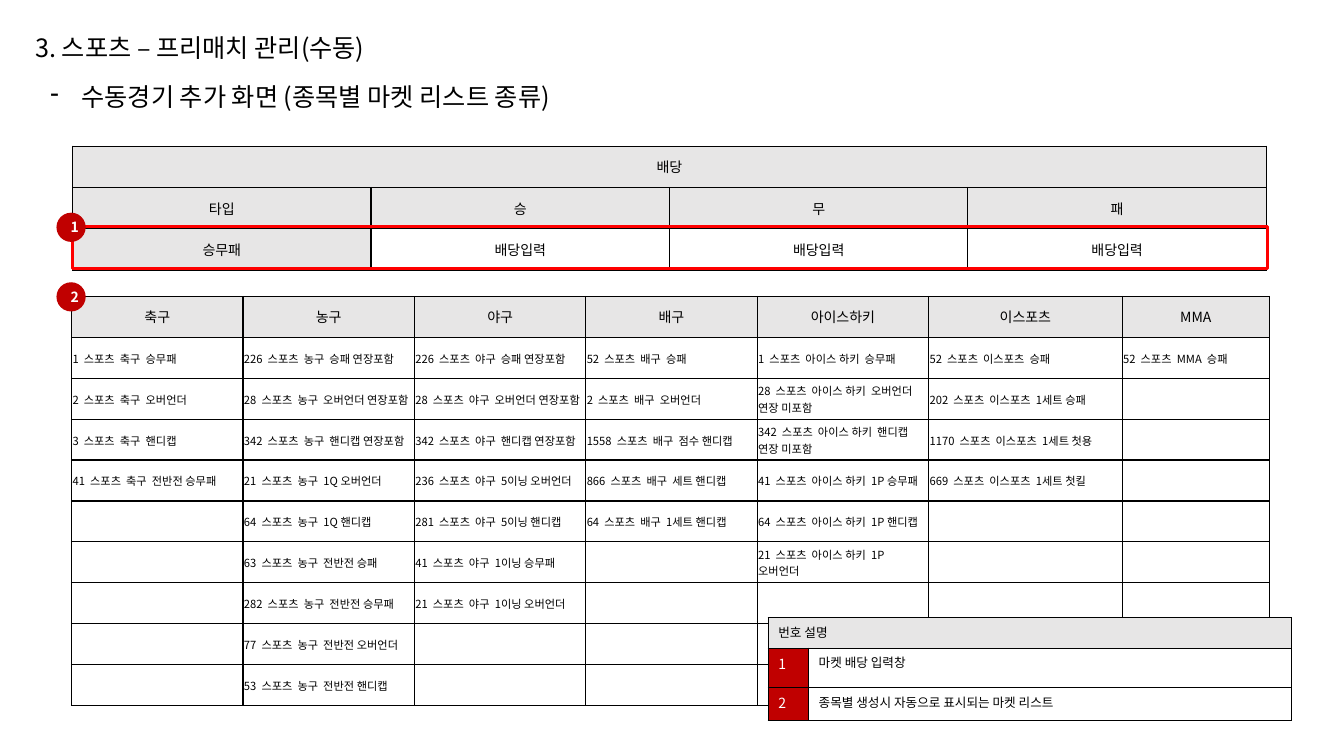
from lxml import etree
from pptx import Presentation
from pptx.dml.color import RGBColor as RGB
from pptx.enum.shapes import MSO_SHAPE as Shape
from pptx.enum.text import MSO_ANCHOR as Anchor, MSO_AUTO_SIZE as Auto, PP_ALIGN as Align
from pptx.oxml.ns import qn
from pptx.util import Inches, Pt

FONT = "Noto Sans CJK KR"
COLORS = {
    "black": "000000", "white": "FFFFFF", "gray": "E7E6E6",
    "dark": "C00000", "red": "FF0000",
}
HUES = {name: RGB.from_string(code) for name, code in COLORS.items()}


def style(para, size, color="black", bold=False, align=Align.LEFT):
    para.alignment = align
    font = para.font
    font.size, font.bold, font.name = Pt(size), bold, FONT
    font.color.rgb = HUES[color]
    props = para._p.get_or_add_pPr().get_or_add_defRPr()
    etree.SubElement(props, qn("a:ea"), typeface=FONT)


def grid(left, top, widths, heights, rows):
    """Add a table with thin black borders; rows hold text."""
    table = slide.shapes.add_table(
        len(heights), len(widths), Inches(left), Inches(top),
        Inches(sum(widths)), Inches(sum(heights))).table
    table.first_row = table.horz_banding = False
    for col, width in zip(table.columns, widths):
        col.width = Inches(width)
    for row, height, texts in zip(table.rows, heights, rows):
        row.height = Inches(height)
        for cell, text in zip(row.cells, texts):
            cell.text = text
            props = cell._tc.get_or_add_tcPr()
            for side in ("lnL", "lnR", "lnT", "lnB"):
                line = etree.SubElement(props, qn(f"a:{side}"), w=str(Pt(1)))
                fill = etree.SubElement(line, qn("a:solidFill"))
                etree.SubElement(fill, qn("a:srgbClr"), val=COLORS["black"])
            cell.fill.solid()
            cell.fill.fore_color.rgb = HUES["white"]
    return table


deck = Presentation()
deck.slide_width, deck.slide_height = Inches(13.33), Inches(7.5)
slide = deck.slides.add_slide(deck.slide_layouts[5])

# Headings
title = slide.shapes.title
title.left, title.top = Inches(0.25), Inches(0.27)
title.width, title.height = Inches(3.82), Inches(0.4)
sub = slide.shapes.add_textbox(Inches(0.4), Inches(0.76), Inches(5.75), Inches(0.4))
for box, text in (
    (title, "3. 스포츠 – 프리매치 관리(수동)"),
    (sub, "수동경기 추가 화면 (종목별 마켓 리스트 종류)"),
):
    frame = box.text_frame
    frame.text = text
    frame.word_wrap = False
    frame.auto_size = Auto.SHAPE_TO_FIT_TEXT
    frame.vertical_anchor = Anchor.TOP
    style(frame.paragraphs[0], 18)

# Dash bullet of the second heading
props = sub.text_frame.paragraphs[0]._p.get_or_add_pPr()
props.set("marL", str(Inches(0.31)))
props.set("indent", str(-Inches(0.31)))
dash = etree.Element(qn("a:buChar"), char="-")
props.insert(0, dash)

# Odds table
odds = grid(0.72, 1.45, [2.96] * 4, [0.41] * 3, [
    ["배당", "", "", ""],
    ["타입", "승", "무", "패"],
    ["승무패"] + ["배당입력"] * 3,
])
odds.cell(0, 0).merge(odds.cell(0, 3))
for r in range(3):
    for c in range(4):
        cell = odds.cell(r, c)
        cell.vertical_anchor = Anchor.MIDDLE
        style(cell.text_frame.paragraphs[0], 10, align=Align.CENTER)
        if r < 2 or c == 0:
            cell.fill.fore_color.rgb = HUES["gray"]

# Market table: header, name used in the rows, then number and market
sports = [
    ("축구", "축구", [("1", "승무패"), ("2", "오버언더"), ("3", "핸디캡"),
                  ("41", "전반전 승무패")]),
    ("농구", "농구", [("226", "승패 연장포함"), ("28", "오버언더 연장포함"),
                  ("342", "핸디캡 연장포함"), ("21", "1Q 오버언더"),
                  ("64", "1Q 핸디캡"), ("63", "전반전 승패"),
                  ("282", "전반전 승무패"), ("77", "전반전 오버언더"),
                  ("53", "전반전 핸디캡")]),
    ("야구", "야구", [("226", "승패 연장포함"), ("28", "오버언더 연장포함"),
                  ("342", "핸디캡 연장포함"), ("236", "5이닝 오버언더"),
                  ("281", "5이닝 핸디캡"), ("41", "1이닝 승무패"),
                  ("21", "1이닝 오버언더")]),
    ("배구", "배구", [("52", "승패"), ("2", "오버언더"), ("1558", "점수 핸디캡"),
                  ("866", "세트 핸디캡"), ("64", "1세트 핸디캡")]),
    ("아이스하키", "아이스 하키", [("1", "승무패"), ("28", "오버언더 연장 미포함"),
                         ("342", "핸디캡 연장 미포함"), ("41", "1P 승무패"),
                         ("64", "1P 핸디캡"), ("21", "1P 오버언더")]),
    ("이스포츠", "이스포츠", [("52", "승패"), ("202", "1세트 승패"),
                      ("1170", "1세트 첫용"), ("669", "1세트 첫킬")]),
    ("MMA", "MMA", [("52", "승패")]),
]
rows = [[head for head, _, _ in sports]]
for i in range(9):
    rows.append(["  ".join((items[i][0], "스포츠", name, items[i][1]))
                 if i < len(items) else "" for _, name, items in sports])
markets = grid(0.71, 2.94, [1.7] * 5 + [1.92, 1.46], [4.06 / 10] * 10, rows)
for r, row in enumerate(markets.rows):
    for cell in row.cells:
        cell.vertical_anchor = Anchor.MIDDLE
        para = cell.text_frame.paragraphs[0]
        if r == 0:
            style(para, 10, align=Align.CENTER)
            cell.fill.fore_color.rgb = HUES["gray"]
        else:
            style(para, 8)
            cell.margin_left = cell.margin_right = cell.margin_top = Inches(0.01)
            cell.margin_bottom = 0

# Legend table
legend = grid(7.62, 6.13, [0.4, 4.79], [0.3, 0.39, 0.33], [
    ["번호 설명", ""],
    ["1", "마켓 배당 입력창"],
    ["2", "종목별 생성시 자동으로 표시되는 마켓 리스트"],
])
legend.cell(0, 0).merge(legend.cell(0, 1))
for r, row in enumerate(legend.rows):
    for c, cell in enumerate(row.cells):
        key = r > 0 and c == 0
        style(cell.text_frame.paragraphs[0], 10 if key else 9,
              "white" if key else "black")
        if key or r == 0:
            cell.fill.fore_color.rgb = HUES["dark" if key else "gray"]

# Red frame around the input row
frame = slide.shapes.add_shape(
    Shape.RECTANGLE, Inches(0.72), Inches(2.25), Inches(11.85), Inches(0.41))
frame.shadow.inherit = False
frame.fill.background()
frame.line.color.rgb = HUES["red"]
frame.line.width = Pt(2.25)

# Number badges
for text, top in (("1", 2.11), ("2", 2.8)):
    badge = slide.shapes.add_shape(
        Shape.OVAL, Inches(0.56), Inches(top), Inches(0.29), Inches(0.29))
    badge.shadow.inherit = False
    badge.fill.solid()
    badge.fill.fore_color.rgb = HUES["dark"]
    badge.line.fill.background()
    badge.text_frame.text = text
    badge.text_frame.vertical_anchor = Anchor.MIDDLE
    style(badge.text_frame.paragraphs[0], 10, "white", True, Align.CENTER)

deck.save("out.pptx")
